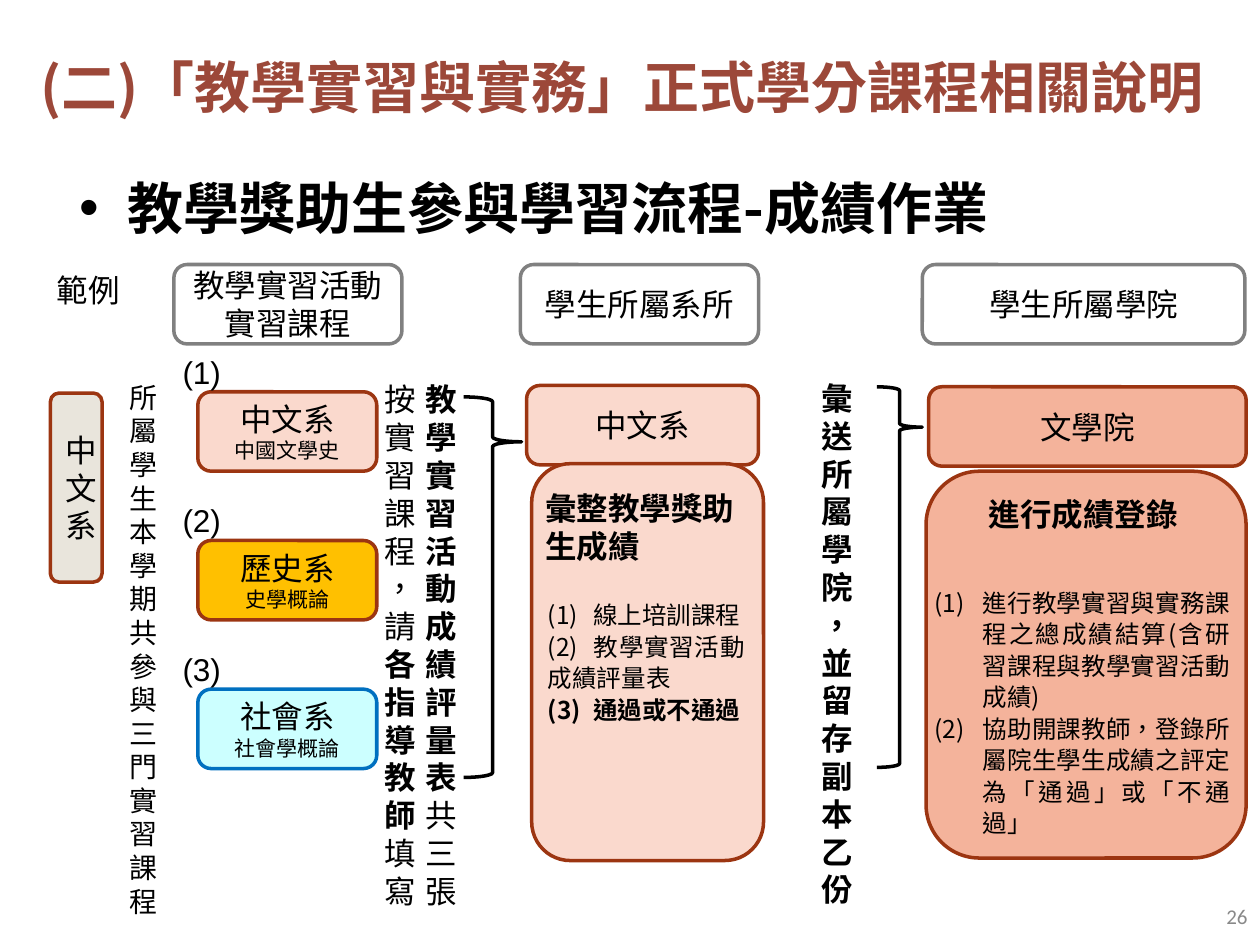
from dataclasses import dataclass
from lxml import etree
from pptx import Presentation
from pptx.dml.color import RGBColor
from pptx.enum import shapes, text
from pptx.oxml.ns import qn
from pptx.util import Inches, Pt


@dataclass(frozen=True)
class Theme:
    ink: str = "000000"
    title: str = "9C4839"
    mute: str = "898989"
    gray: str = "808080"
    white: str = "FFFFFF"
    rust: str = "9C3511"
    pink: str = "FAD9CD"
    coral: str = "F4B39B"
    sand: str = "E9E5DC"
    gold: str = "FFC000"
    aqua: str = "CCFFFF"
    blue: str = "0070C0"
    big: int = 32
    main: int = 18
    side: int = 16
    body: int = 14
    small: int = 12
    noto: str = "Noto Sans CJK SC"
    sans: str = "Arial"
    serif: str = "Cambria"
    num: str = "Calibri"


T = Theme()
ALIGN = text.PP_ALIGN
KIND = shapes.MSO_SHAPE


def add(parent, tag, **attrs):
    node = etree.SubElement(parent, qn(tag))
    for key, val in attrs.items():
        node.set(key, str(val))
    return node


def write(shape, paras, size=T.main, font=T.sans, color=T.ink, bold=False,
          align=ALIGN.LEFT, mid=False, lead=None, mark=None, tab=None):
    """Each paragraph is a string or a list of (text, overrides) runs."""
    frame = shape.text_frame
    frame.word_wrap = True
    frame.vertical_anchor = text.MSO_ANCHOR.MIDDLE if mid else text.MSO_ANCHOR.TOP
    for i, para in enumerate(paras):
        p = frame.paragraphs[0] if i == 0 else frame.add_paragraph()
        p.alignment = align
        if lead:
            p.line_spacing = Pt(lead)
        props = p._p.get_or_add_pPr()
        if mark:
            props.set("marL", str(Inches(0.38)))
            props.set("indent", str(Inches(-0.38)))
            if mark == "num":
                add(props, "a:buFont", typeface=font)
                add(props, "a:buAutoNum", type="arabicParenBoth")
            else:
                add(props, "a:buFont", typeface=T.sans)
                add(props, "a:buChar", char=mark)
        if tab:
            add(add(props, "a:tabLst"), "a:tab", pos=Inches(tab), algn="l")
        for words, fmt in [(para, {})] if isinstance(para, str) else para:
            run = p.add_run()
            run.text = words
            run.font.size = Pt(fmt.get("size", size))
            run.font.bold = fmt.get("bold", bold)
            run.font.color.rgb = RGBColor.from_string(color)
            run.font.name = font
            rpr = run._r.get_or_add_rPr()
            rpr.set("lang", "zh-TW")
            add(rpr, "a:ea", typeface=T.noto)


def place(box, x, y, w, h):
    return [Inches(v) for v in (box[0] + x, box[1] + y, w, h)]


def note(slide, at, *paras, **fmt):
    write(slide.shapes.add_textbox(*at), paras, **fmt)


def card(slide, at, fill, line, *paras, kind=KIND.ROUNDED_RECTANGLE):
    shape = slide.shapes.add_shape(kind, *at)
    shape.shadow.inherit = False
    if fill:
        shape.fill.solid()
        shape.fill.fore_color.rgb = RGBColor.from_string(fill)
    else:
        shape.fill.background()
    shape.line.color.rgb = RGBColor.from_string(line)
    shape.line.width = Pt(2)
    if paras:
        write(shape, paras, font=T.serif, align=ALIGN.CENTER, mid=True)
    return shape


def brace(slide, at, point):
    shape = card(slide, at, None, T.ink, kind=KIND.RIGHT_BRACE)
    shape.adjustments[0] = 0.083
    shape.adjustments[1] = point


def header(slide, box):
    note(slide, place(box, -0.16, 0.06, 10.2, 1.25),
         "(二)「教學實習與實務」正式學分課程相關說明",
         size=T.big, font=T.noto, color=T.title, bold=True,
         align=ALIGN.CENTER, mid=True)
    note(slide, place(box, 0.53, 1.33, 9.69, 0.74),
         "教學獎助生參與學習流程-成績作業",
         size=T.big, font=T.noto, bold=True, mark="•")


def courses(slide, box):
    # Student's department and the column beside it
    note(slide, place(box, 0, 0, 0.89, 0.4), "範例")
    card(slide, place(box, 0.05, 1.02, 0.41, 1.5), T.sand, T.rust, "中文系")
    note(slide, place(box, 0.58, 0.87, 0.35, 4.41),
         "所屬學生本學期共參與三門實習課程", size=T.side)
    # Three courses at equal steps
    card(slide, place(box, 1.03, 0, 1.81, 0.63), T.white, T.gray,
         "教學實習活動", "實習課程")
    rows = [("中文系", "中國文學史", T.pink, T.rust),
            ("歷史系", "史學概論", T.gold, T.rust),
            ("社會系", "社會學概論", T.aqua, T.blue)]
    for i, (name, topic, fill, line) in enumerate(rows):
        y = 1.01 + 1.18 * i
        card(slide, place(box, 1.22, y, 1.42, 0.63), fill, line,
             name, [(topic, {"size": T.small})])
        note(slide, place(box, 1, y - 0.36, 0.55, 0.4), f"({i + 1})")


def grades(slide, box):
    # Upright text and brace leading to the department
    strong = {"bold": True}
    note(slide, place(box, 0, 0.87, 0.38, 4.34), "按實習課程，",
         [("請", {}), ("各指導教師", strong)], "填寫")
    note(slide, place(box, 0.33, 0.87, 0.38, 4.34),
         [("教學實習活動成績評量表", strong), ("共三張", {})])
    brace(slide, place(box, 0.73, 1.05, 0.46, 3.02), 0.118)
    # Department
    card(slide, place(box, 1.18, 0, 1.89, 0.63), T.white, T.gray, "學生所屬系所")
    card(slide, place(box, 1.23, 0.96, 1.84, 0.63), T.pink, T.rust, "中文系")
    card(slide, place(box, 1.27, 1.58, 1.84, 3.15), T.pink, T.rust)
    note(slide, place(box, 1.28, 1.73, 1.81, 0.71), "彙整教學獎助生成績", bold=True)
    note(slide, place(box, 1.3, 2.6, 1.76, 1.11), "(1)\t線上培訓課程",
         "(2)\t教學實習活動成績評量表", [("(3)\t通過或不通過", strong)],
         size=T.body, font=T.noto, align=ALIGN.JUSTIFY, lead=18, tab=0.36)


def college(slide, box):
    # Upright text and brace leading to the college
    note(slide, place(box, 0, 0.86, 0.38, 4.34),
         "彙送所屬學院，並留存副本乙份", font=T.noto, bold=True)
    brace(slide, place(box, 0.54, 0.97, 0.36, 3.02), 0.106)
    # College
    card(slide, place(box, 0.9, 0, 2.56, 0.63), T.white, T.gray, "學生所屬學院")
    card(slide, place(box, 0.95, 0.97, 2.52, 0.63), T.coral, T.rust, "文學院")
    card(slide, place(box, 0.93, 1.64, 2.54, 3.07), T.coral, T.rust)
    note(slide, place(box, 1.33, 1.78, 1.81, 0.4), "進行成績登錄", bold=True)
    note(slide, place(box, 0.9, 2.5, 2.54, 1.87),
         "進行教學實習與實務課程之總成績結算(含研習課程與教學實習活動成績)",
         "協助開課教師，登錄所屬院生學生成績之評定為「通過」或「不通過」",
         size=T.body, font=T.noto, align=ALIGN.JUSTIFY, lead=18, mark="num")


def footer(slide, box):
    note(slide, place(box, 0, 0, 2.33, 0.4), "26", size=T.small, font=T.num,
         color=T.mute, align=ALIGN.RIGHT, mid=True)


def main():
    deck = Presentation()
    deck.slide_width, deck.slide_height = Inches(10), Inches(7.5)
    slide = deck.slides.add_slide(deck.slide_layouts[6])
    header(slide, (0, 0))
    courses(slide, (0.35, 2.1))
    grades(slide, (2.95, 2.1))
    college(slide, (6.42, 2.1))
    footer(slide, (7.67, 7.07))
    deck.save("out.pptx")


if __name__ == "__main__":
    main()
